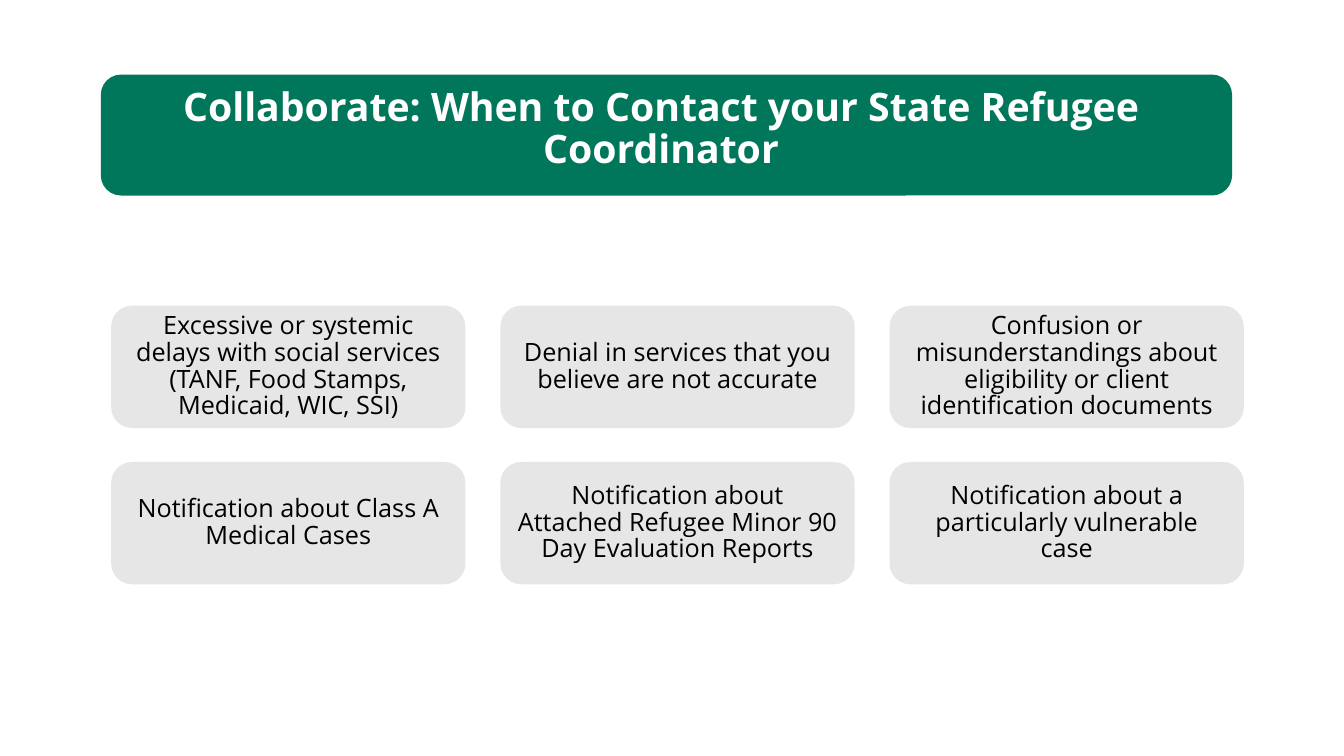
from pptx import Presentation
from pptx import util as u
from pptx.dml import color
from pptx.enum import shapes, text

TITLE = "Collaborate: When to Contact your State Refugee Coordinator"
REASONS = [
    [
        "Excessive or systemic delays with social services (TANF, Food Stamps, Medicaid, WIC, SSI)",
        "Denial in services that you believe are not accurate",
        "Confusion or misunderstandings about eligibility or client identification documents",
    ],
    [
        "Notification about Class A Medical Cases",
        "Notification about Attached Refugee Minor 90 Day Evaluation Reports",
        "Notification about a particularly vulnerable case",
    ],
]
COLORS = {"green": "00765A", "gray": "E7E6E6", "black": "000000", "white": "FFFFFF"}
FONT = "Open Sans"
SLIDE_SIZE = (13.33, 7.5)
BANNER = (1, 0.74, 11.22, 1.2)
TITLE_BOX = (0.89, 0.82, 11.33, 1.04)
GRID_LEFT, GRID_TOP = 1.11, 3.04
CARD_WIDTH, CARD_HEIGHT = 3.5, 1.2
COLUMN_STEP, ROW_STEP = 3.86, 1.55


def rgb(name):
    return color.RGBColor.from_string(COLORS[name])


def add_panel(slide, box, fill, line_width=None):
    panel = slide.shapes.add_shape(
        shapes.MSO_SHAPE.ROUNDED_RECTANGLE, *(u.Inches(length) for length in box)
    )
    panel.shadow.inherit = False
    panel.fill.solid()
    panel.fill.fore_color.rgb = rgb(fill)
    if line_width:
        panel.line.color.rgb = rgb(fill)
        panel.line.width = u.Pt(line_width)
    else:
        panel.line.fill.background()
    return panel


def write_text(shape, content, size, ink, bold=False, spacing=0.9, anchor="MIDDLE"):
    frame = shape.text_frame
    frame.word_wrap = True
    frame.auto_size = text.MSO_AUTO_SIZE.NONE
    frame.vertical_anchor = text.MSO_ANCHOR[anchor]
    paragraph = frame.paragraphs[0]
    paragraph.alignment = text.PP_ALIGN.CENTER
    paragraph.line_spacing = spacing
    paragraph.space_before = u.Pt(0)
    run = paragraph.add_run()
    run.text = content
    run.font.name = FONT
    run.font.size = u.Pt(size)
    run.font.bold = bold
    run.font.color.rgb = rgb(ink)


def main():
    presentation = Presentation()
    presentation.slide_width, presentation.slide_height = map(u.Inches, SLIDE_SIZE)
    slide = presentation.slides.add_slide(presentation.slide_layouts.get_by_name("Title Only"))

    add_panel(slide, BANNER, "green")
    for row, reasons in enumerate(REASONS):
        for column, reason in enumerate(reasons):
            left = GRID_LEFT + column * COLUMN_STEP
            top = GRID_TOP + row * ROW_STEP
            card = add_panel(slide, (left, top, CARD_WIDTH, CARD_HEIGHT), "gray", line_width=1)
            write_text(card, reason, size=18, ink="black", spacing=0.88)

    title = slide.shapes.title
    title.left, title.top, title.width, title.height = map(u.Inches, TITLE_BOX)
    write_text(title, TITLE, size=28, ink="white", bold=True, anchor="TOP")
    title.element.getparent().append(title.element)

    presentation.save("out.pptx")


if __name__ == "__main__":
    main()
